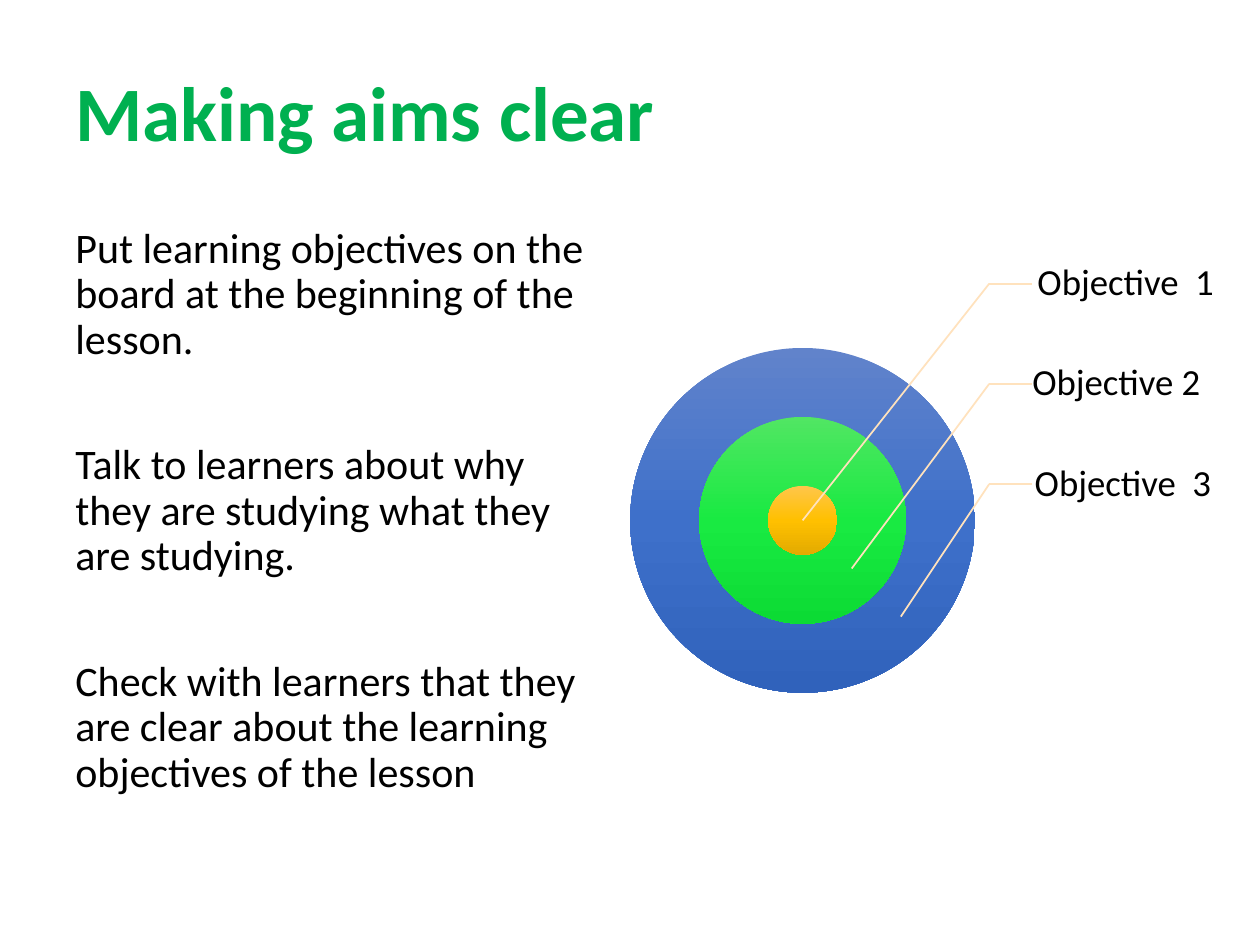
from copy import deepcopy
from dataclasses import dataclass

from lxml.etree import SubElement
from pptx import Presentation
from pptx.dml.color import RGBColor
from pptx.enum.shapes import MSO_CONNECTOR, MSO_SHAPE
from pptx.enum.text import MSO_ANCHOR
from pptx.oxml.ns import qn
from pptx.slide import Slide
from pptx.util import Cm, Pt


@dataclass(frozen=True)
class Theme:
    font: str = "Calibri"
    title_color: str = "00B050"
    text_color: str = "000000"
    leader_color: str = "FFE2BD"
    title_size: int = 44
    body_size: int = 24
    label_size: int = 21
    leader_width: int = 1
    line_spacing: float = 0.9
    paragraph_gap: int = 46


@dataclass(frozen=True)
class Box:
    left: float
    top: float
    width: float
    height: float


@dataclass(frozen=True)
class Insets:
    left: float = 0.25
    top: float = 0.13
    right: float = 0.25
    bottom: float = 0.13


@dataclass(frozen=True)
class Ring:
    diameter: float
    gradient: tuple[str, str, str]


@dataclass(frozen=True)
class Label:
    text: str
    width: float


THEME = Theme()
TITLE_BOX = Box(1.27, 0.76, 22.86, 3.18)
BODY_BOX = Box(1.27, 4.45, 11.23, 13.49)
BODY_PARAGRAPHS = [
    "Put learning objectives on the board at the beginning of the lesson.",
    "Talk to learners about why they are studying what they are studying.",
    "Check with learners that they are clear about the learning objectives of the lesson",
]

CENTER_X, CENTER_Y = 16.18, 10.49
RING_UNIT = 1.39
RINGS = [
    Ring(5 * RING_UNIT, ("6183CB", "3E70CA", "3062BB")),
    Ring(3 * RING_UNIT, ("51E663", "19EA42", "0CDB34")),
    Ring(RING_UNIT, ("FFC64B", "FFC000", "E3AB00")),
]

LABELS = [Label("Objective  1", 4.11), Label("Objective 2", 4.32), Label("Objective  3", 4.22)]
LABEL_CENTER_X, LABEL_HEIGHT = 22.56, 2.02
LABEL_INSETS = Insets(0.41, 0.08, 0.08, 0.08)
FIRST_LABEL_Y = 5.72
ELBOW_X, LEADER_END_X = 19.94, 20.8
TARGET_STEP_X, TARGET_STEP_Y = 0.99, 0.97


def add_text(slide: Slide, box: Box, paragraphs: list[str], size: int, color: str,
             bold: bool = False, anchor: MSO_ANCHOR = MSO_ANCHOR.MIDDLE,
             insets: Insets = Insets()) -> None:
    shape = slide.shapes.add_textbox(Cm(box.left), Cm(box.top), Cm(box.width), Cm(box.height))
    text_frame = shape.text_frame
    text_frame.word_wrap = True
    text_frame.vertical_anchor = anchor
    text_frame.margin_left, text_frame.margin_right = Cm(insets.left), Cm(insets.right)
    text_frame.margin_top, text_frame.margin_bottom = Cm(insets.top), Cm(insets.bottom)
    text_frame.text = "\n".join(paragraphs)
    for index, paragraph in enumerate(text_frame.paragraphs):
        paragraph.line_spacing = THEME.line_spacing
        paragraph.space_before = Pt(THEME.paragraph_gap if index else 0)
        for run in paragraph.runs:
            run.font.name = THEME.font
            run.font.size = Pt(size)
            run.font.bold = bold
            run.font.color.rgb = RGBColor.from_string(color)


def add_ring(slide: Slide, ring: Ring) -> None:
    radius = ring.diameter / 2
    shape = slide.shapes.add_shape(
        MSO_SHAPE.OVAL, Cm(CENTER_X - radius), Cm(CENTER_Y - radius),
        Cm(ring.diameter), Cm(ring.diameter))
    shape.shadow.inherit = False
    shape.line.fill.background()
    shape.fill.gradient()
    shape.fill.gradient_angle = 270
    stop_list = shape._element.spPr.find(qn("a:gradFill")).find(qn("a:gsLst"))
    stop_list.append(deepcopy(stop_list[0]))
    for index, (stop, color) in enumerate(zip(shape.fill.gradient_stops, ring.gradient)):
        stop.position = index / 2
        stop.color.rgb = RGBColor.from_string(color)


def add_leader(slide: Slide, start_x: float, start_y: float, end_x: float, end_y: float) -> None:
    connector = slide.shapes.add_connector(
        MSO_CONNECTOR.STRAIGHT, Cm(start_x), Cm(start_y), Cm(end_x), Cm(end_y))
    connector.line.color.rgb = RGBColor.from_string(THEME.leader_color)
    connector.line.width = Pt(THEME.leader_width)
    SubElement(connector._element.spPr, qn("a:effectLst"))


def add_objective(slide: Slide, index: int, label: Label) -> None:
    label_y = FIRST_LABEL_Y + index * LABEL_HEIGHT
    box = Box(LABEL_CENTER_X - label.width / 2, label_y - LABEL_HEIGHT / 2,
              label.width, LABEL_HEIGHT)
    add_text(slide, box, [label.text], THEME.label_size, THEME.text_color, insets=LABEL_INSETS)
    add_leader(slide, ELBOW_X, label_y, LEADER_END_X, label_y)
    add_leader(slide, ELBOW_X, label_y,
               CENTER_X + index * TARGET_STEP_X, CENTER_Y + index * TARGET_STEP_Y)


def main() -> None:
    presentation = Presentation()
    presentation.slide_width, presentation.slide_height = Cm(25.4), Cm(19.05)
    slide = presentation.slides.add_slide(presentation.slide_layouts[6])
    add_text(slide, TITLE_BOX, ["Making aims clear"], THEME.title_size, THEME.title_color, bold=True)
    add_text(slide, BODY_BOX, BODY_PARAGRAPHS, THEME.body_size, THEME.text_color,
             anchor=MSO_ANCHOR.TOP)
    for ring in RINGS:
        add_ring(slide, ring)
    for index, label in enumerate(LABELS):
        add_objective(slide, index, label)
    presentation.save("out.pptx")


if __name__ == "__main__":
    main()
